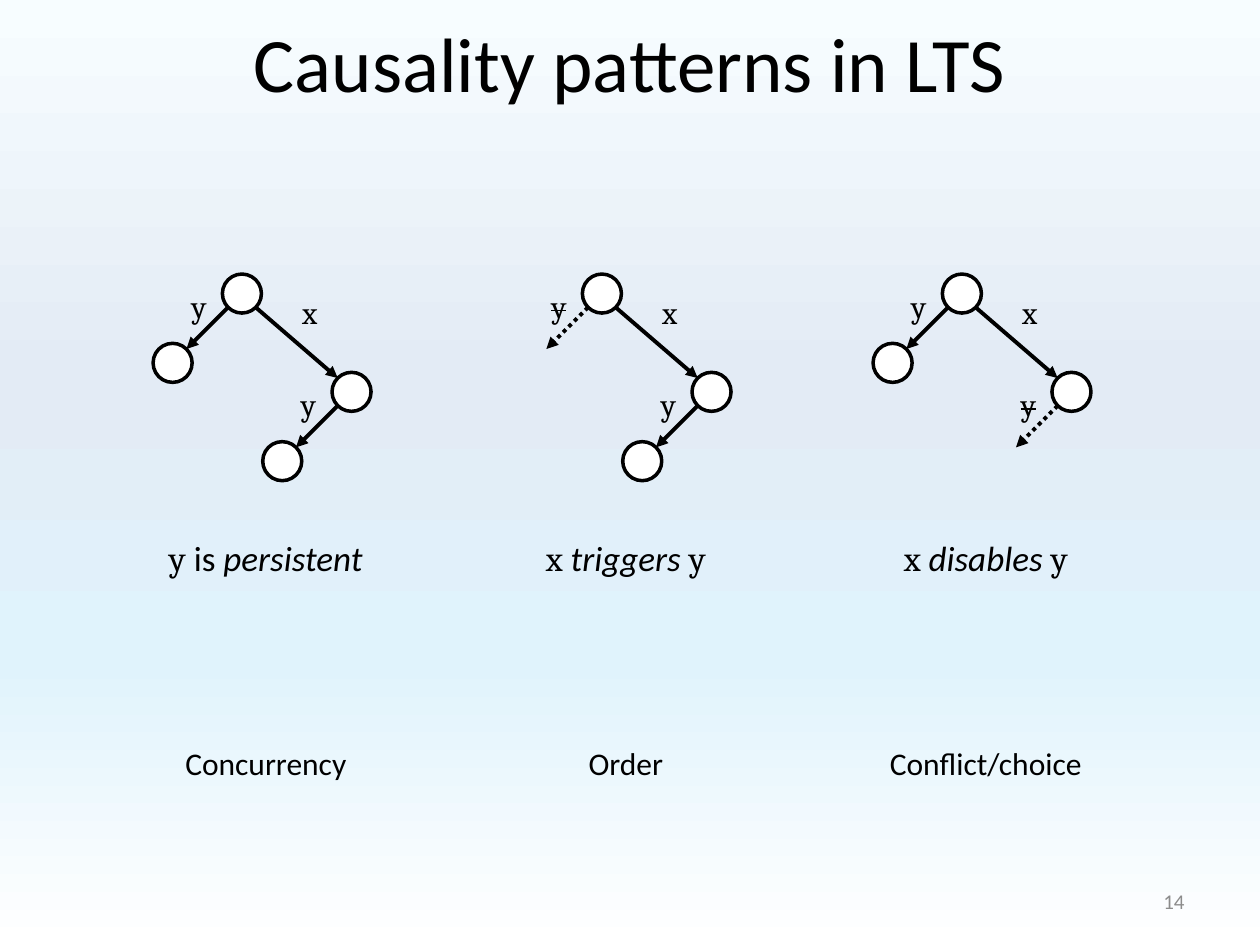
import lxml.etree
import pptx
import pptx.dml.color
import pptx.enum.dml
import pptx.enum.shapes
import pptx.enum.text
import pptx.oxml.ns
import pptx.util

Inches = pptx.util.Inches
Align = pptx.enum.text.PP_ALIGN
BLACK = pptx.dml.color.RGBColor(0x00, 0x00, 0x00)
WHITE = pptx.dml.color.RGBColor(0xFF, 0xFF, 0xFF)
GRAY = pptx.dml.color.RGBColor(0x8C, 0x8C, 0x8C)
BACKGROUND_STOPS = [
    (0, pptx.dml.color.RGBColor(0xF7, 0xFD, 0xFF)),
    (40, pptx.dml.color.RGBColor(0xE3, 0xEB, 0xF5)),
    (70, pptx.dml.color.RGBColor(0xE0, 0xF3, 0xFC)),
    (100, WHITE),
]

TITLE = "Causality patterns in LTS"
PAGE_NUMBER = "14"
PLAIN = {"name": "Calibri"}
ITALIC = {"name": "Calibri", "italic": True}
SYMBOL = {"name": "Cambria"}
# "blocked" names the state in which y cannot happen
PATTERNS = [
    {"relation": [("y", SYMBOL), (" is ", PLAIN), ("persistent", ITALIC)],
     "meaning": "Concurrency", "blocked": None},
    {"relation": [("x ", SYMBOL), ("triggers ", ITALIC), ("y", SYMBOL)],
     "meaning": "Order", "blocked": "start"},
    {"relation": [("x ", SYMBOL), ("disables ", ITALIC), ("y", SYMBOL)],
     "meaning": "Conflict/choice", "blocked": "after x"},
]

SLIDE_WIDTH, SLIDE_HEIGHT = 10, 7.5
FIRST_COLUMN, COLUMN_PITCH, COLUMN_WIDTH = 1.22, 2.857, 1.78
RELATION_TOP, MEANING_TOP = 4.21, 5.86
NODE_SIZE = 0.31
RIM = NODE_SIZE / 2 * 0.707  # centre to diagonal rim point, along each axis
STATES = {"start": (0.7, 2.33), "after x": (1.57, 3.11)}  # centres in a column
Y_STEP = 0.55  # a y transition goes this far left and down
X_LABEL, Y_LABEL = (0.38, -0.05), (-0.5, -0.1)  # from the state's centre
LABEL_SIZE = (0.33, 0.4)


def add_text(shapes, place, spans, size, align=Align.CENTER, color=BLACK,
             wrap=False, anchor=pptx.enum.text.MSO_ANCHOR.TOP):
    box = shapes.add_textbox(*map(Inches, place))
    box.text_frame.word_wrap = wrap
    box.text_frame.vertical_anchor = anchor
    para = box.text_frame.paragraphs[0]
    para.alignment = align
    for text, font_values in spans:
        span = para.add_run()
        span.text = text
        span.font.color.rgb = color
        for key, value in {"size": pptx.util.Pt(size), **font_values}.items():
            setattr(span.font, key, value)
    return box


def add_state(shapes, x, y):
    node = shapes.add_shape(
        pptx.enum.shapes.MSO_SHAPE.OVAL,
        *map(Inches, (x - NODE_SIZE / 2, y - NODE_SIZE / 2, NODE_SIZE, NODE_SIZE)))
    node.shadow.inherit = False
    node.fill.solid()
    node.fill.fore_color.rgb = WHITE
    node.line.color.rgb = BLACK
    node.line.width = pptx.util.Pt(2)


def add_arrow(shapes, start, end, dotted=False):
    """Arrow between the facing diagonal rim points of two states."""
    side = 1 if end[0] > start[0] else -1
    arrow = shapes.add_connector(
        pptx.enum.shapes.MSO_CONNECTOR.STRAIGHT,
        *map(Inches, (start[0] + side * RIM, start[1] + RIM,
                      end[0] - side * RIM, end[1] - RIM)))
    arrow.line.color.rgb = BLACK
    arrow.line.width = pptx.util.Pt(2.25)
    if dotted:
        arrow.line.dash_style = pptx.enum.dml.MSO_LINE.ROUND_DOT
    line = arrow.line._get_or_add_ln()
    lxml.etree.SubElement(line, pptx.oxml.ns.qn("a:tailEnd"), type="triangle")
    lxml.etree.SubElement(arrow._element.spPr, pptx.oxml.ns.qn("a:effectLst"))


def add_label(shapes, state, offset, letter, struck=False):
    place = (state[0] + offset[0], state[1] + offset[1], *LABEL_SIZE)
    box = add_text(shapes, place, [(letter, SYMBOL)], 18, Align.LEFT)
    if struck:
        span = box.text_frame.paragraphs[0].runs[0]
        span._r.get_or_add_rPr().set("strike", "sngStrike")


def add_pattern(page, left, pattern):
    shapes = page.shapes.add_group_shape().shapes
    states = {name: (left + x, y) for name, (x, y) in STATES.items()}
    add_arrow(shapes, states["start"], states["after x"])
    add_label(shapes, states["start"], X_LABEL, "x")
    for name, state in states.items():
        blocked = name == pattern["blocked"]
        target = (state[0] - Y_STEP, state[1] + Y_STEP)
        add_state(shapes, *state)
        if not blocked:
            add_state(shapes, *target)
        add_arrow(shapes, state, target, dotted=blocked)
        add_label(shapes, state, Y_LABEL, "y", struck=blocked)
    add_text(shapes, (left, RELATION_TOP, COLUMN_WIDTH, 0.44),
             pattern["relation"], 20)
    add_text(page.shapes, (left, MEANING_TOP, COLUMN_WIDTH, 0.4),
             [(pattern["meaning"], PLAIN)], 18)


def paint_background(page):
    fill = page.background.fill
    fill.gradient()
    fill.gradient_angle = 270  # counter-clockwise, so top to bottom
    stops = page.background._cSld.find(".//" + pptx.oxml.ns.qn("a:gsLst"))
    for stop in list(stops):
        stops.remove(stop)
    for percent, color in BACKGROUND_STOPS:
        stop = lxml.etree.SubElement(
            stops, pptx.oxml.ns.qn("a:gs"), pos=str(percent * 1000))
        lxml.etree.SubElement(
            stop, pptx.oxml.ns.qn("a:srgbClr"), val=str(color))


def main():
    deck = pptx.Presentation()
    deck.slide_width = Inches(SLIDE_WIDTH)
    deck.slide_height = Inches(SLIDE_HEIGHT)
    page = deck.slides.add_slide(deck.slide_layouts[6])
    paint_background(page)
    middle = {"wrap": True, "anchor": pptx.enum.text.MSO_ANCHOR.MIDDLE}
    add_text(page.shapes, (0.5, 0.06, SLIDE_WIDTH - 1, 0.86),
             [(TITLE, PLAIN)], 44, **middle)
    add_text(page.shapes, (7.17, 6.95, 2.33, 0.4), [(PAGE_NUMBER, PLAIN)], 12,
             Align.RIGHT, GRAY, **middle)
    for column, pattern in enumerate(PATTERNS):
        add_pattern(page, FIRST_COLUMN + column * COLUMN_PITCH, pattern)
    deck.save("out.pptx")


if __name__ == "__main__":
    main()
